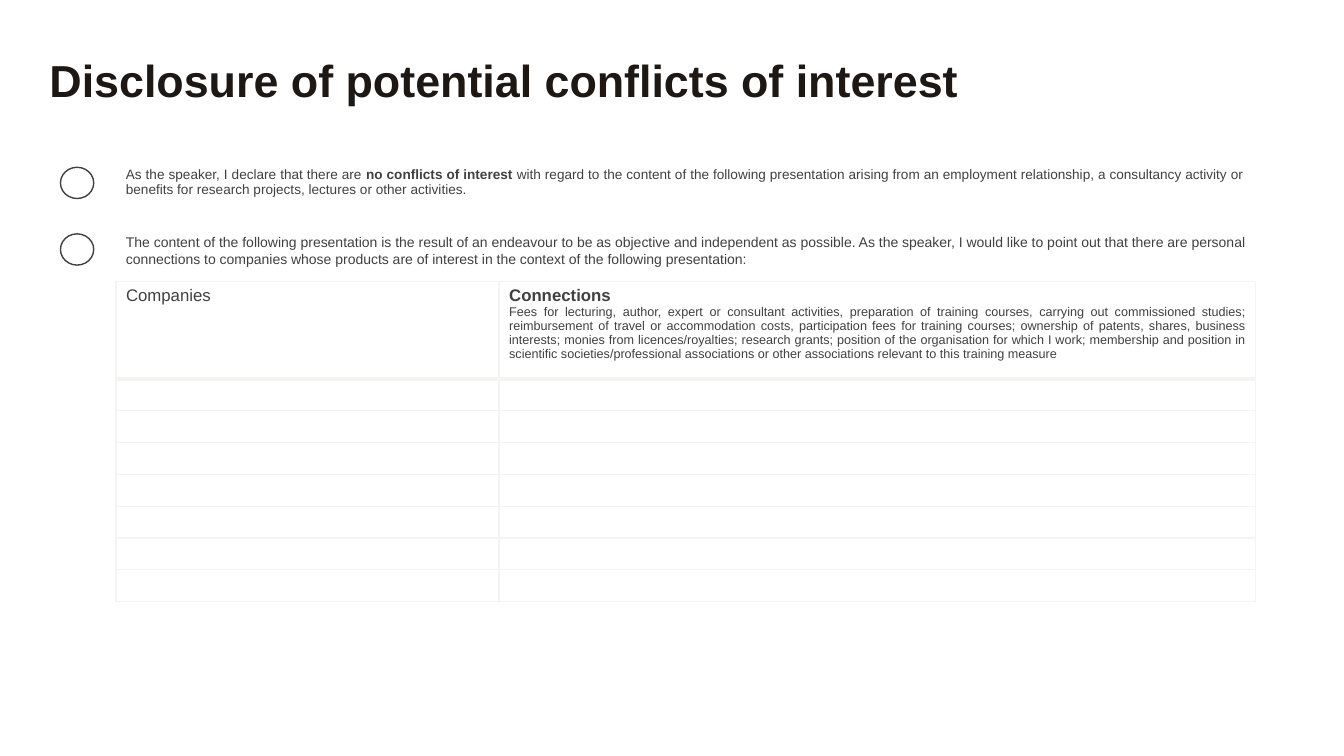
from dataclasses import dataclass

from lxml.etree import SubElement
from pptx import Presentation
from pptx.dml.color import RGBColor
from pptx.enum.shapes import MSO_SHAPE as Preset
from pptx.enum.text import MSO_ANCHOR as Anchor, MSO_AUTO_SIZE as AutoSize, PP_ALIGN as Align
from pptx.oxml.ns import qn
from pptx.util import Inches, Pt


@dataclass(frozen=True)
class Theme:
    font: str = "Arial"
    title_color: str = "1D1814"
    text_color: str = "404040"
    border_color: str = "F6F4F2"
    title_size: float = 32
    heading_size: float = 12
    statement_size: float = 10
    declaration_size: float = 9.7
    detail_size: float = 9


THEME = Theme()
LEFT, WIDTH = 1.15, 11.29
TABLE_TOP, TABLE_HEIGHT, HEADER_HEIGHT = 2.79, 3.18, 0.97
COLUMN_WIDTHS = (3.8, 7.5)
EMPTY_ROWS = 7

TITLE = "Disclosure of potential conflicts of interest"
DECLARATION = (
    ("As the speaker, I declare that there are ", False),
    ("no conflicts of interest ", True),
    ("with regard to the content of the following presentation arising from an employment "
     "relationship, a consultancy activity or benefits for research projects, lectures or "
     "other activities.", False),
)
STATEMENT = (
    ("The content of the following presentation is the result of an endeavour to be as objective "
     "and independent as possible. As the speaker, I would like to point out that there are "
     "personal connections to companies whose products are of interest in the context of the "
     "following presentation:", False),
)
CONNECTION_DETAILS = (
    "Fees for lecturing, author, expert or consultant activities, preparation of training courses, "
    "carrying out commissioned studies; reimbursement of travel or accommodation costs, "
    "participation fees for training courses; ownership of patents, shares, business interests; "
    "monies from licences/royalties; research grants; position of the organisation for which I "
    "work; membership and position in scientific societies/professional associations or other "
    "associations relevant to this training measure"
)


def write(paragraph, pieces, size, color=THEME.text_color, align=Align.LEFT):
    paragraph.alignment = align
    for text, bold in pieces:
        run = paragraph.add_run()
        run.text = text
        run.font.name = THEME.font
        run.font.size = Pt(size)
        run.font.bold = bold
        run.font.color.rgb = RGBColor.from_string(color)


def add_title(slide):
    title = slide.shapes.title
    title.left, title.top = Inches(0.39), Inches(0.53)
    title.width, title.height = Inches(12.54), Inches(0.83)
    frame = title.text_frame
    frame.auto_size = AutoSize.NONE
    frame.vertical_anchor = Anchor.TOP
    paragraph = frame.paragraphs[0]
    paragraph.line_spacing = 0.9
    write(paragraph, [(TITLE, True)], THEME.title_size, THEME.title_color)


def add_option_circle(slide, top):
    circle = slide.shapes.add_shape(
        Preset.FLOWCHART_CONNECTOR, Inches(0.6), Inches(top), Inches(0.33), Inches(0.31))
    circle.shadow.inherit = False
    circle.fill.background()
    circle.line.color.rgb = RGBColor.from_string(THEME.text_color)
    circle.line.width = Pt(1)


def add_text(slide, top, height, pieces, size, anchor=Anchor.TOP, line_spacing=None):
    box = slide.shapes.add_textbox(Inches(LEFT), Inches(top), Inches(WIDTH), Inches(height))
    frame = box.text_frame
    frame.word_wrap = True
    frame.vertical_anchor = anchor
    paragraph = frame.paragraphs[0]
    paragraph.line_spacing = line_spacing
    write(paragraph, pieces, size, align=Align.JUSTIFY)


def set_borders(cell, bottom_width):
    properties = cell._tc.get_or_add_tcPr()
    for side, width in (("lnL", 1), ("lnR", 1), ("lnT", 1), ("lnB", bottom_width)):
        line = SubElement(properties, qn(f"a:{side}"), w=str(Pt(width)))
        fill = SubElement(line, qn("a:solidFill"))
        SubElement(fill, qn("a:srgbClr"), val=THEME.border_color)


def add_connections_table(slide):
    table = slide.shapes.add_table(
        EMPTY_ROWS + 1, len(COLUMN_WIDTHS), Inches(LEFT), Inches(TABLE_TOP),
        Inches(WIDTH), Inches(TABLE_HEIGHT)).table
    table.first_row = table.horz_banding = False
    for column, width in zip(table.columns, COLUMN_WIDTHS):
        column.width = Inches(width)
    for index, row in enumerate(table.rows):
        is_header = index == 0
        row.height = Inches(
            HEADER_HEIGHT if is_header else (TABLE_HEIGHT - HEADER_HEIGHT) / EMPTY_ROWS)
        for cell in row.cells:
            set_borders(cell, 3 if is_header else 1)
            cell.fill.background()
            if not is_header:
                end = SubElement(cell.text_frame.paragraphs[0]._p, qn("a:endParaRPr"))
                end.set("sz", str(THEME.heading_size * 100))

    companies, connections = (cell.text_frame for cell in table.rows[0].cells)
    write(companies.paragraphs[0], [("Companies", False)], THEME.heading_size)
    write(connections.paragraphs[0], [("Connections", True)], THEME.heading_size)
    write(connections.add_paragraph(), [(CONNECTION_DETAILS, False)], THEME.detail_size,
          align=Align.JUSTIFY)


def main():
    presentation = Presentation()
    presentation.slide_width, presentation.slide_height = Inches(13.33), Inches(7.5)
    slide = presentation.slides.add_slide(presentation.slide_layouts[5])
    add_title(slide)
    for top in (1.66, 2.32):
        add_option_circle(slide, top)
    add_text(slide, 2.27, 0.6, STATEMENT, THEME.statement_size)
    add_connections_table(slide)
    add_text(slide, 1.61, 0.4, DECLARATION, THEME.declaration_size, Anchor.MIDDLE, 0.9)
    presentation.save("out.pptx")


if __name__ == "__main__":
    main()
